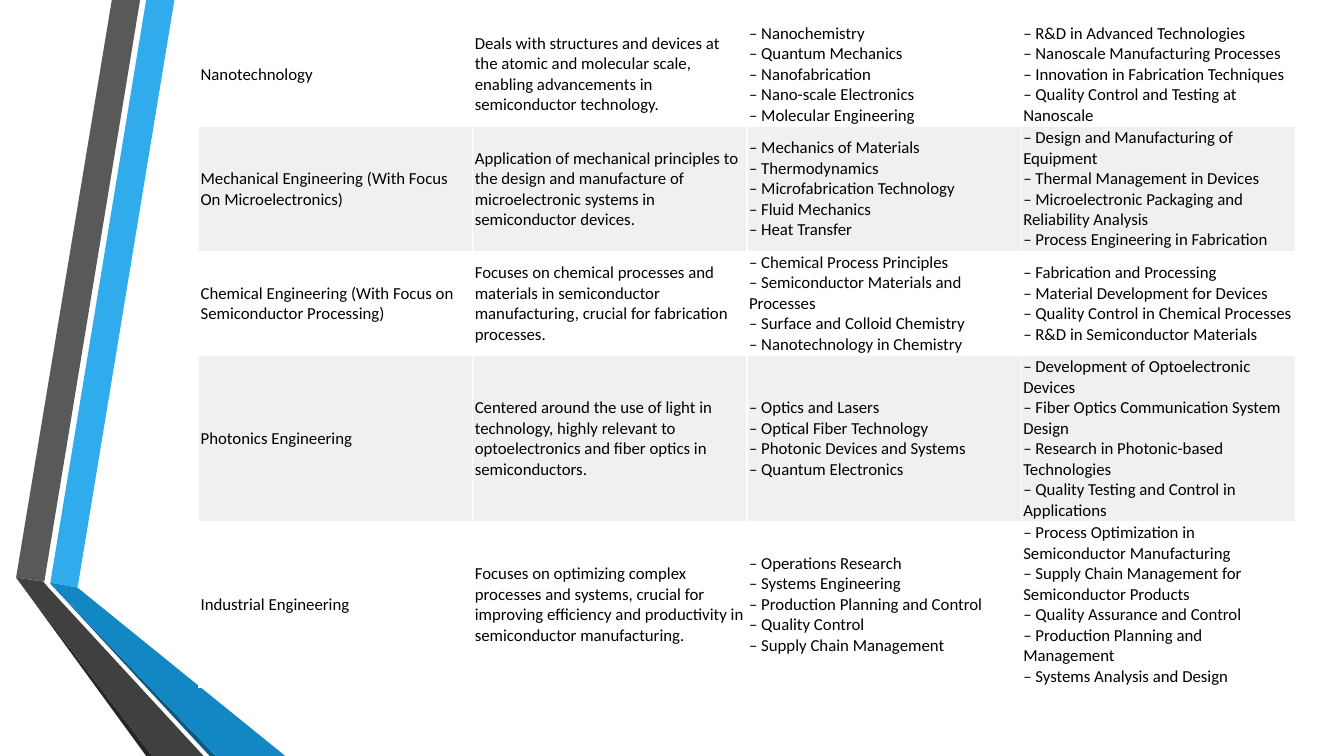
from dataclasses import dataclass

from lxml import etree
from pptx import Presentation
from pptx.dml.color import RGBColor
from pptx.enum.text import MSO_ANCHOR
from pptx.oxml.ns import qn
from pptx.slide import Slide
from pptx.table import _Cell
from pptx.util import Inches, Pt

MIDDLE = MSO_ANCHOR.MIDDLE
BLANK_LAYOUT = 6
TEXT_SIZE = 12
COLORS = {
    "sky": "30ACEC", "blue": "1287C3", "navy": "0C5A82",
    "gray": "595959", "charcoal": "404040", "black_gray": "262626",
    "text": "000000", "row": "FFFFFF", "row_alternate": "F0F0F0",
}
CELL_FORMAT = {
    "vertical_anchor": MIDDLE,
    "margin_left": Inches(0.02), "margin_right": Inches(0.02),
    "margin_top": Inches(0.01), "margin_bottom": Inches(0.01),
}
FONT_FORMAT = {"name": "Calibri", "size": Pt(TEXT_SIZE)}
TABLE_LEFT, TABLE_TOP, COLUMN_WIDTH = 1.97, 0.22, 2.72


@dataclass
class Ribbon:
    color: str
    points: list[tuple[float, float]]


@dataclass
class Field:
    name: str
    summary: str
    subjects: list[str]
    careers: list[str]
    height: float


RIBBONS = [
    Ribbon("sky", [(0.5, 5.78), (0.77, 5.83), (1.73, 0), (1.45, 0)]),
    Ribbon("gray", [(1.39, 0), (1.11, 0), (0.16, 5.73), (0.44, 5.77)]),
    Ribbon("black_gray", [(0.16, 5.73), (1.45, 7.5), (1.51, 7.5)]),
    Ribbon("navy", [(0.5, 5.79), (2.08, 7.5), (2.14, 7.5)]),
    Ribbon("blue", [(0.5, 5.78), (0.5, 5.79), (2.14, 7.5), (2.83, 7.5), (0.77, 5.83)]),
    Ribbon("charcoal", [(2.02, 7.5), (0.48, 5.83), (0.43, 5.77), (0.16, 5.73), (1.51, 7.5)]),
]

FIELDS = [
    Field(
        "Nanotechnology",
        "Deals with structures and devices at the atomic and molecular scale, "
        "enabling advancements in semiconductor technology.",
        ["Nanochemistry", "Quantum Mechanics", "Nanofabrication",
         "Nano-scale Electronics", "Molecular Engineering"],
        ["R&D in Advanced Technologies", "Nanoscale Manufacturing Processes",
         "Innovation in Fabrication Techniques",
         "Quality Control and Testing at Nanoscale"],
        0.95,
    ),
    Field(
        "Mechanical Engineering (With Focus On Microelectronics)",
        "Application of mechanical principles to the design and manufacture of "
        "microelectronic systems in semiconductor devices.",
        ["Mechanics of Materials", "Thermodynamics", "Microfabrication Technology",
         "Fluid Mechanics", "Heat Transfer"],
        ["Design and Manufacturing of Equipment", "Thermal Management in Devices",
         "Microelectronic Packaging and Reliability Analysis",
         "Process Engineering in Fabrication"],
        1.13,
    ),
    Field(
        "Chemical Engineering (With Focus on Semiconductor Processing)",
        "Focuses on chemical processes and materials in semiconductor "
        "manufacturing, crucial for fabrication processes.",
        ["Chemical Process Principles", "Semiconductor Materials and Processes",
         "Surface and Colloid Chemistry", "Nanotechnology in Chemistry"],
        ["Fabrication and Processing", "Material Development for Devices",
         "Quality Control in Chemical Processes", "R&D in Semiconductor Materials"],
        0.95,
    ),
    Field(
        "Photonics Engineering",
        "Centered around the use of light in technology, highly relevant to "
        "optoelectronics and fiber optics in semiconductors.",
        ["Optics and Lasers", "Optical Fiber Technology",
         "Photonic Devices and Systems", "Quantum Electronics"],
        ["Development of Optoelectronic Devices",
         "Fiber Optics Communication System Design",
         "Research in Photonic-based Technologies",
         "Quality Testing and Control in Applications"],
        1.5,
    ),
    Field(
        "Industrial Engineering",
        "Focuses on optimizing complex processes and systems, crucial for "
        "improving efficiency and productivity in semiconductor manufacturing.",
        ["Operations Research", "Systems Engineering",
         "Production Planning and Control", "Quality Control",
         "Supply Chain Management"],
        ["Process Optimization in Semiconductor Manufacturing",
         "Supply Chain Management for Semiconductor Products",
         "Quality Assurance and Control", "Production Planning and Management",
         "Systems Analysis and Design"],
        1.5,
    ),
]


def rgb(color: str) -> RGBColor:
    return RGBColor.from_string(COLORS[color])


def apply_format(target: object, values: dict) -> None:
    for name, value in values.items():
        setattr(target, name, value)


def dashed(items: list[str]) -> str:
    """Join items with line breaks, each after a dash."""
    return "\v".join(f"– {item}" for item in items)


def draw_ribbon(page: Slide, ribbon: Ribbon) -> None:
    start, *others = [(Inches(x), Inches(y)) for x, y in ribbon.points]
    builder = page.shapes.build_freeform(*start)
    builder.add_line_segments(others, close=True)
    shape = builder.convert_to_shape()
    shape.shadow.inherit = False
    shape.fill.solid()
    shape.fill.fore_color.rgb = rgb(ribbon.color)
    shape.line.fill.background()


def fill_cell(cell: _Cell, text: str, color: str) -> None:
    apply_format(cell, CELL_FORMAT)
    cell.fill.solid()
    cell.fill.fore_color.rgb = rgb(color)
    para = cell.text_frame.paragraphs[0]
    para.text = text
    for span in para.runs:
        apply_format(span.font, FONT_FORMAT)
        span.font.color.rgb = rgb("text")
    # Line breaks need the text size too, or they stretch their lines
    for line_break in para._p.findall(qn("a:br")):
        etree.SubElement(line_break, qn("a:rPr"), sz=str(TEXT_SIZE * 100))


def draw_table(page: Slide, fields: list[Field]) -> None:
    height = sum(field.height for field in fields)
    table = page.shapes.add_table(
        len(fields), 4, Inches(TABLE_LEFT), Inches(TABLE_TOP),
        Inches(4 * COLUMN_WIDTH), Inches(height),
    ).table
    apply_format(table, {"first_row": False, "horz_banding": False})
    for column in table.columns:
        column.width = Inches(COLUMN_WIDTH)
    for index, (row, field) in enumerate(zip(table.rows, fields)):
        row.height = Inches(field.height)
        color = "row_alternate" if index % 2 else "row"
        texts = [field.name, field.summary, dashed(field.subjects), dashed(field.careers)]
        for cell, text in zip(row.cells, texts):
            fill_cell(cell, text, color)


def main() -> None:
    deck = Presentation()
    deck.slide_width, deck.slide_height = Inches(13.33), Inches(7.5)
    page = deck.slides.add_slide(deck.slide_layouts[BLANK_LAYOUT])
    for ribbon in RIBBONS:
        draw_ribbon(page, ribbon)
    draw_table(page, FIELDS)
    deck.save("out.pptx")


if __name__ == "__main__":
    main()
